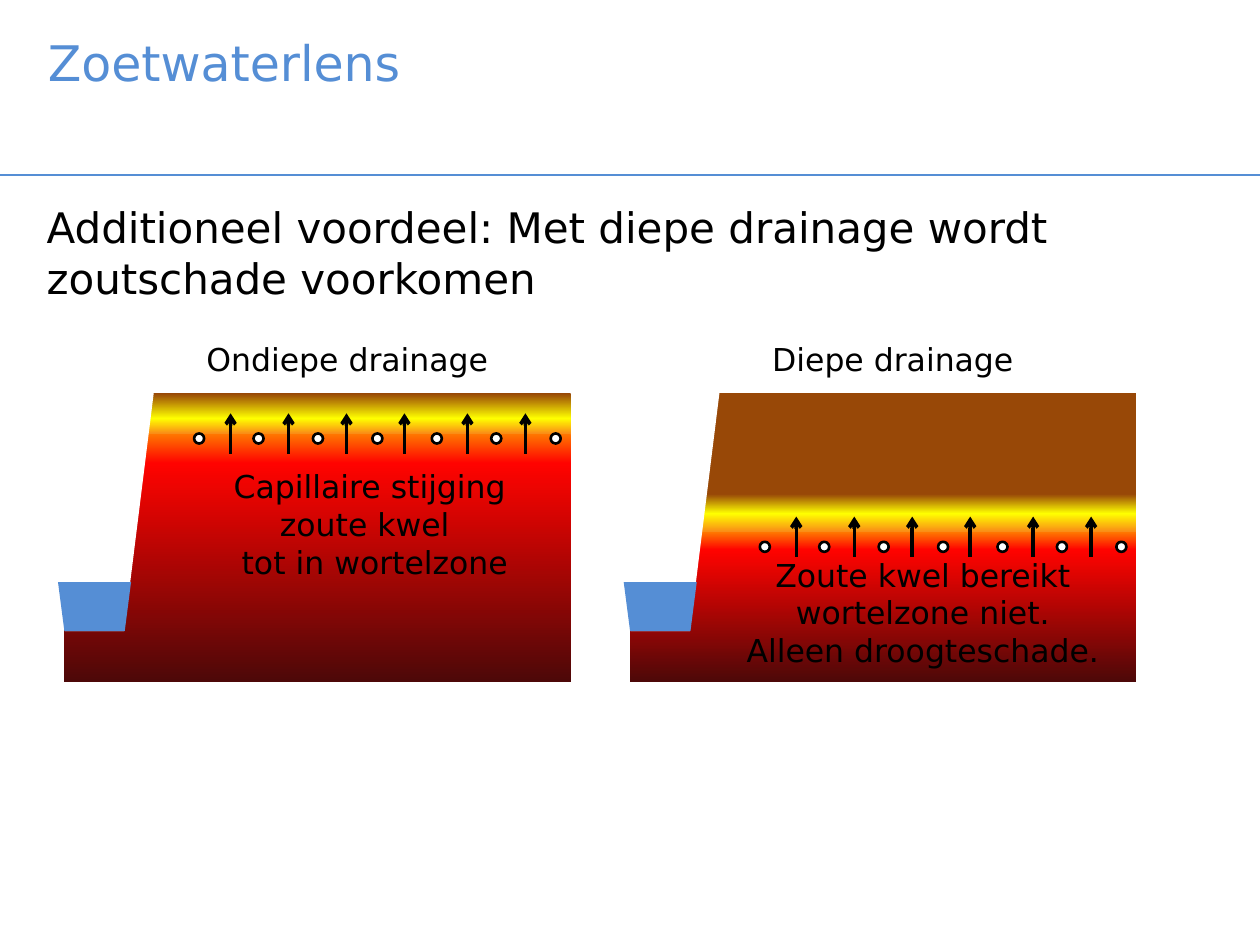
from lxml.etree import SubElement
from pptx import Presentation
from pptx.dml.color import RGBColor
from pptx.enum.shapes import MSO_CONNECTOR, MSO_SHAPE
from pptx.enum.text import MSO_ANCHOR, MSO_AUTO_SIZE, PP_ALIGN
from pptx.oxml.ns import qn
from pptx.util import Inches, Pt

rgb = RGBColor.from_string
BLUE = "558ED5"
FONT = "DejaVu Sans"

prs = Presentation()
prs.slide_width, prs.slide_height = Inches(10), Inches(7.5)
s = prs.slides.add_slide(prs.slide_layouts[1])


def add_block(kind, x, y, w, h, fill, line=None):
    sp = s.shapes.add_shape(kind, Inches(x), Inches(y), Inches(w), Inches(h))
    sp.shadow.inherit = False
    if isinstance(fill, str):
        sp.fill.solid()
        sp.fill.fore_color.rgb = rgb(fill)
    else:
        sp.fill.gradient()
        grad = sp.fill._xPr.find(qn("a:gradFill"))
        for child in list(grad):
            grad.remove(child)
        stops = SubElement(grad, qn("a:gsLst"))
        for pos, color in fill:
            gs = SubElement(stops, qn("a:gs"), pos=str(pos * 1000))
            SubElement(gs, qn("a:srgbClr"), val=color)
        SubElement(grad, qn("a:lin"), ang="5400000", scaled="0")
    if line:
        sp.line.color.rgb = rgb(line)
        sp.line.width = Pt(1.5)
    else:
        sp.line.fill.background()
    return sp


def add_run(p, text, size, color="000000", align=PP_ALIGN.LEFT):
    p.alignment = align
    r = p.add_run()
    r.text = text
    r.font.size = Pt(size)
    r.font.name = FONT
    r.font.color.rgb = rgb(color)


title, body = s.shapes.title, s.placeholders[1]
for ph, box in ((title, (0.28, 0.21, 9.45, 1.02)), (body, (0.27, 1.55, 9.45, 5.75))):
    ph.left, ph.top, ph.width, ph.height = [Inches(v) for v in box]
    ph.text_frame.vertical_anchor = MSO_ANCHOR.TOP
    ph.text_frame.auto_size = MSO_AUTO_SIZE.NONE
add_run(title.text_frame.paragraphs[0], "Zoetwaterlens", 28, BLUE)

p = body.text_frame.paragraphs[0]
pPr = p._p.get_or_add_pPr()
pPr.set("marL", "0")
pPr.set("indent", "0")
SubElement(pPr, qn("a:buNone"))
p.space_before = Pt(0)
add_run(p, "Additioneel voordeel: Met diepe drainage wordt zoutschade voorkomen", 24)

SALT = [(0, "FF7A00"), (12, "FF0300"), (100, "4D0808")]
SOIL_TOP, SOIL_BOTTOM = 3.12, 5.41
panels = [
    dict(dx=0, salt_top=3.44, pipe_y=3.44, arrow_y=3.6,
         soil=[(1, "984807"), (63, "FFFF00"), (100, "FA8D16")],
         caption="Ondiepe drainage", caption_w=2.44, note_box=(1.73, 3.66, 2.49, 1.01), wrap=False,
         note=[("Capillaire stijging", 0.08), ("zoute kwel", 0.16), ("tot in wortelzone", 0)]),
    dict(dx=4.49, salt_top=4.22, pipe_y=4.3, arrow_y=4.42,
         soil=[(73, "984807"), (87, "FFFF00"), (100, "FA8D16")],
         caption="Diepe drainage", caption_w=2.12, note_box=(5.61, 4.36, 3.43, 1.01), wrap=True,
         note=[("Zoute kwel bereikt wortelzone niet.", 0), ("Alleen droogteschade.", 0)]),
]
lines = [(0, 1.39, 10, 1.39, BLUE, 0.75, False)]

for panel in panels:
    dx, salt_top = panel["dx"], panel["salt_top"]
    add_block(MSO_SHAPE.RECTANGLE, 0.51 + dx, salt_top, 4.02, SOIL_BOTTOM - salt_top, SALT)
    add_block(MSO_SHAPE.RECTANGLE, 0.98 + dx, SOIL_TOP, 3.55, salt_top - SOIL_TOP, panel["soil"])
    ditch = add_block(MSO_SHAPE.TRAPEZOID, 0.28 + dx, SOIL_TOP, 0.94, 1.89, "FFFFFF")
    water = add_block(MSO_SHAPE.TRAPEZOID, 0.46 + dx, 4.62, 0.58, 0.39, BLUE)
    water.adjustments[0] = 0.13
    ditch.rotation = water.rotation = 180
    for i in range(7):
        add_block(MSO_SHAPE.OVAL, 1.54 + dx + i * 2.83 / 6, panel["pipe_y"], 0.08, 0.08, "FFFFFF", "000000")
    for x in (1.83, 2.29, 2.75, 3.21, 3.71, 4.17):
        lines.append((x + dx, panel["arrow_y"], x + dx, panel["arrow_y"] - 0.32, "000000", 2, True))

    labels = [
        ((1.54 + dx, 2.65, panel["caption_w"], 0.4), [(panel["caption"], 0)], PP_ALIGN.LEFT, False),
        (panel["note_box"], panel["note"], PP_ALIGN.CENTER, panel["wrap"]),
    ]
    for box, rows, align, wrap in labels:
        tf = s.shapes.add_textbox(*[Inches(v) for v in box]).text_frame
        tf.word_wrap = wrap
        tf.auto_size = MSO_AUTO_SIZE.SHAPE_TO_FIT_TEXT
        for i, (text, right_margin) in enumerate(rows):
            p = tf.add_paragraph() if i else tf.paragraphs[0]
            p._p.get_or_add_pPr().set("marR", str(Inches(right_margin)))
            add_run(p, text, 18, align=align)

for x1, y1, x2, y2, color, width, arrow in lines:
    cn = s.shapes.add_connector(MSO_CONNECTOR.STRAIGHT, Inches(x1), Inches(y1), Inches(x2), Inches(y2))
    cn.line.color.rgb = rgb(color)
    cn.line.width = Pt(width)
    if arrow:
        SubElement(cn.line._get_or_add_ln(), qn("a:tailEnd"), type="arrow")
    SubElement(cn._element.spPr, qn("a:effectLst"))

prs.save("out.pptx")
